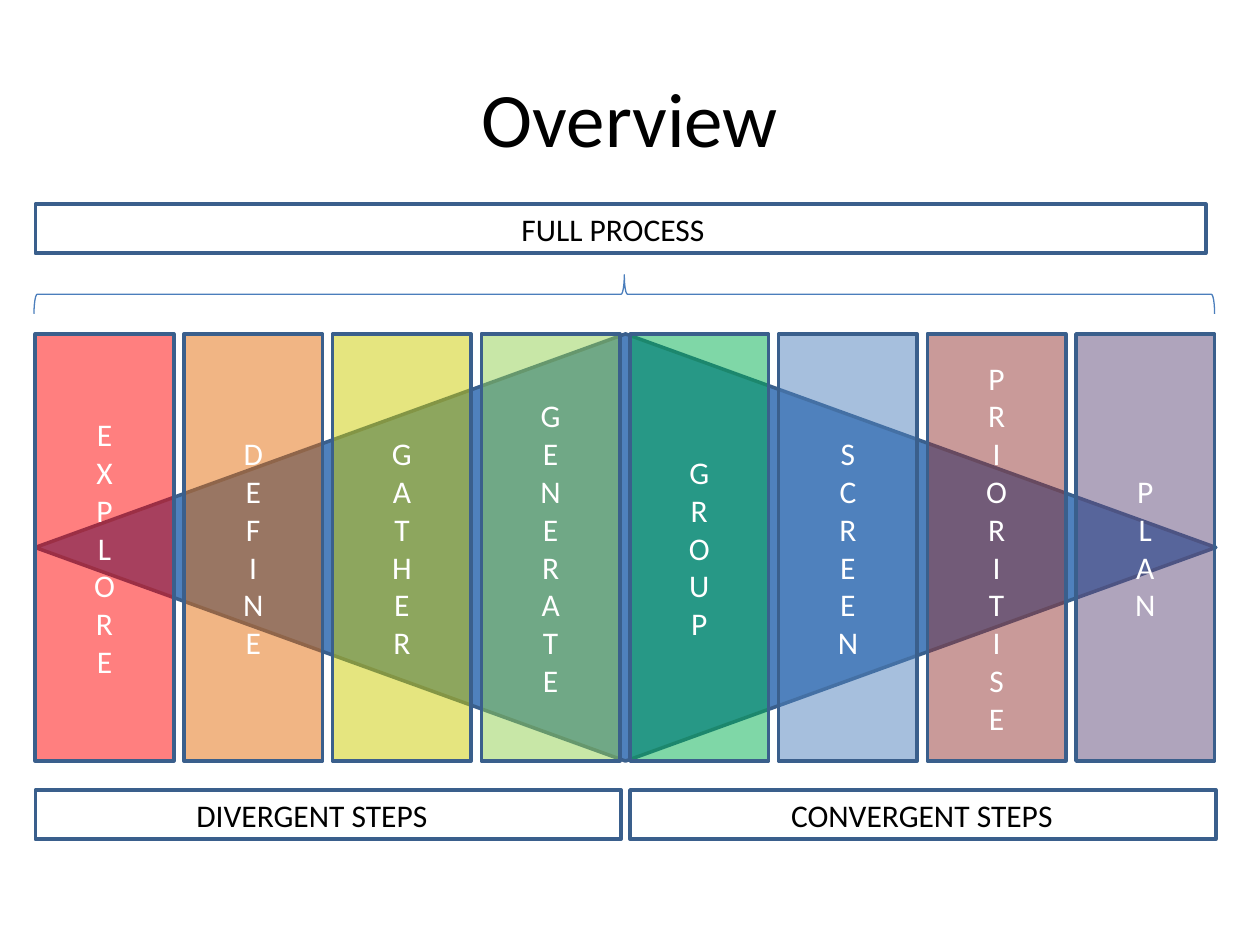
from dataclasses import dataclass
from typing import Optional

from pptx import Presentation
from pptx import util as u
from pptx.dml.color import RGBColor
from pptx.enum import shapes, text
from pptx.oxml import ns
from lxml import etree

BLACK = RGBColor(0x00, 0x00, 0x00)
WHITE = RGBColor(0xFF, 0xFF, 0xFF)
BLUE = RGBColor(0x4F, 0x81, 0xBD)
OUTLINE = RGBColor(0x3A, 0x5F, 0x8C)
BRACE = RGBColor(0x4B, 0x7E, 0xBC)
RED = RGBColor(0xFF, 0x00, 0x00)
ORANGE = RGBColor(0xE4, 0x6C, 0x0A)
YELLOW = RGBColor(0xCC, 0xCC, 0x00)
LIME = RGBColor(0x92, 0xD0, 0x50)
GREEN = RGBColor(0x00, 0xB0, 0x50)
BROWN = RGBColor(0x95, 0x37, 0x35)
PURPLE = RGBColor(0x60, 0x4A, 0x7B)

LEFT = 0.28
PITCH = 1.18
STEP_TOP = 2.65
STEP_WIDTH = 1.1
STEP_HEIGHT = 3.39
FULL_WIDTH = 9.37
BAR_HEIGHT = 0.39
PHASE_TOP = 6.27


@dataclass(frozen=True)
class Box:
    left: float
    top: float
    width: float
    height: float

    def lengths(self) -> list:
        return [u.Inches(v) for v in (self.left, self.top, self.width, self.height)]


@dataclass(frozen=True)
class Step:
    word: str
    color: RGBColor


@dataclass(frozen=True)
class Label:
    wording: str
    box: Box
    align: text.PP_ALIGN = text.PP_ALIGN.LEFT
    size: int = 18
    anchor: text.MSO_ANCHOR = text.MSO_ANCHOR.TOP


STEPS = [
    Step("EXPLORE", RED),
    Step("DEFINE", ORANGE),
    Step("GATHER", YELLOW),
    Step("GENERATE", LIME),
    Step("GROUP", GREEN),
    Step("SCREEN", BLUE),
    Step("PRIORITISE", BROWN),
    Step("PLAN", PURPLE),
]
BARS = [
    Box(LEFT, 1.62, 9.29, BAR_HEIGHT),
    Box(LEFT, PHASE_TOP, 4.65, BAR_HEIGHT),
    Box(LEFT + 4 * PITCH, PHASE_TOP, 4.65, BAR_HEIGHT),
]
LABELS = [
    Label("Overview", Box(0.5, 0.3, 9, 1.25), text.PP_ALIGN.CENTER, 44,
          text.MSO_ANCHOR.MIDDLE),
    Label("FULL PROCESS", Box(2.58, 1.62, 4.57, 0.4), text.PP_ALIGN.CENTER),
    Label("DIVERGENT STEPS", Box(LEFT + PITCH, PHASE_TOP, 2.28, 0.4)),
    Label("CONVERGENT STEPS", Box(LEFT + 5 * PITCH, PHASE_TOP, 2.28, 0.4)),
]


def apply_format(target, values: dict) -> None:
    for name, value in values.items():
        setattr(target, name, value)


def write_lines(frame, lines, size: int, color: RGBColor,
                align: text.PP_ALIGN, anchor: text.MSO_ANCHOR) -> None:
    apply_format(frame, {"word_wrap": True, "vertical_anchor": anchor})
    for index, line in enumerate(lines):
        paragraph = frame.add_paragraph() if index else frame.paragraphs[0]
        paragraph.alignment = align
        run = paragraph.add_run()
        run.text = line
        apply_format(run.font, {"name": "Calibri", "size": u.Pt(size)})
        run.font.color.rgb = color


def draw_shape(slide, kind: shapes.MSO_SHAPE, box: Box,
               fill: Optional[RGBColor] = None,
               line: RGBColor = OUTLINE, weight: float = 2):
    shape = slide.shapes.add_shape(kind, *box.lengths())
    shape.shadow.inherit = False
    if fill is None:
        shape.fill.background()
    else:
        shape.fill.solid()
        shape.fill.fore_color.rgb = fill
    shape.line.color.rgb = line
    shape.line.width = u.Pt(weight)
    return shape


def set_opacity(shape, percent: int) -> None:
    color = shape.element.spPr.find(ns.qn("a:solidFill")).find(ns.qn("a:srgbClr"))
    etree.SubElement(color, ns.qn("a:alpha")).set("val", str(percent * 1000))


def draw_step(slide, step: Step, index: int) -> None:
    box = Box(LEFT + index * PITCH, STEP_TOP, STEP_WIDTH, STEP_HEIGHT)
    shape = draw_shape(slide, shapes.MSO_SHAPE.RECTANGLE, box, step.color)
    set_opacity(shape, 50)
    write_lines(shape.text_frame, step.word, 18, WHITE,
                text.PP_ALIGN.CENTER, text.MSO_ANCHOR.MIDDLE)


def draw_label(slide, label: Label) -> None:
    shape = slide.shapes.add_textbox(*label.box.lengths())
    write_lines(shape.text_frame, [label.wording], label.size, BLACK,
                label.align, label.anchor)


def main() -> None:
    presentation = Presentation()
    apply_format(presentation, {"slide_width": u.Inches(10),
                                "slide_height": u.Inches(7.5)})
    slide = presentation.slides.add_slide(presentation.slide_layouts[6])

    draw_shape(slide, shapes.MSO_SHAPE.DIAMOND,
               Box(LEFT, STEP_TOP, FULL_WIDTH, STEP_HEIGHT), BLUE)
    for index, step in enumerate(STEPS):
        draw_step(slide, step, index)
    brace = draw_shape(slide, shapes.MSO_SHAPE.RIGHT_BRACE,
                       Box(4.8, -2.35, 0.31, FULL_WIDTH), line=BRACE, weight=0.75)
    brace.rotation = 270
    for bar in BARS:
        draw_shape(slide, shapes.MSO_SHAPE.RECTANGLE, bar)
    for label in LABELS:
        draw_label(slide, label)

    presentation.save("out.pptx")


if __name__ == "__main__":
    main()
